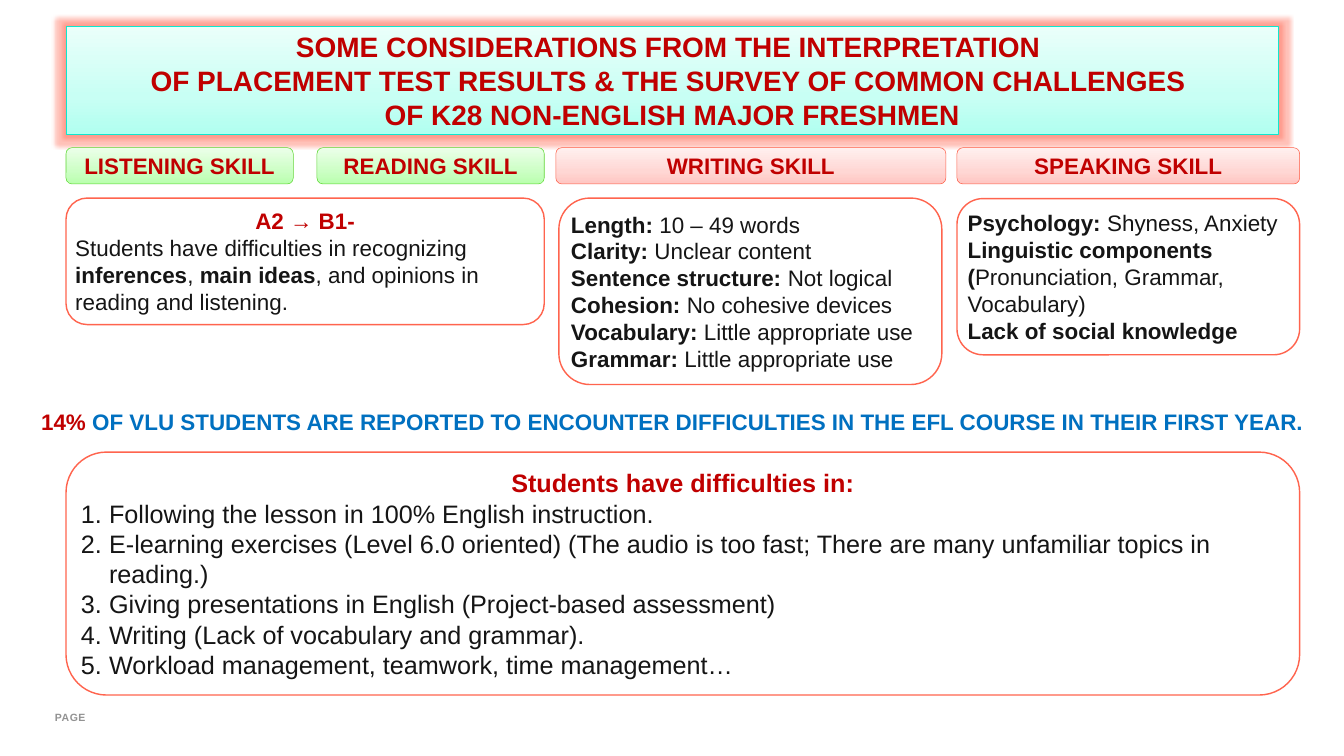
from copy import deepcopy

from lxml import etree
from pptx import Presentation
from pptx.dml.color import RGBColor
from pptx.enum.shapes import MSO_SHAPE
from pptx.enum.text import MSO_ANCHOR, PP_ALIGN
from pptx.oxml.ns import qn
from pptx.util import Pt

RECT, ROUNDED = MSO_SHAPE.RECTANGLE, MSO_SHAPE.ROUNDED_RECTANGLE
LEFT, CENTER = PP_ALIGN.LEFT, PP_ALIGN.CENTER
TOP, MIDDLE = MSO_ANCHOR.TOP, MSO_ANCHOR.MIDDLE
PX = 9144  # 100 px to the inch

THEME = {
    "font": "Arial",
    "heading": "C00000", "body": "151515", "notice": "0070C0", "footer": "929292",
    "card": "FFFFFF", "card_line": "FF644E", "glow": "FF644E",
    "teal": (("B1FFF0", "C8FFF4", "EAFFFA"), "10E7CE"),
    "green": (("B8FFAC", "CCFFC5", "ECFFE9"), "5DD731"),
    "red": (("FFC6C2", "FFD7D4", "FFF0EF"), "FE5F48"),
    "title_pt": 40, "list_pt": 36, "text_pt": 32, "footer_pt": 15,
}

prs = Presentation()
prs.slide_width, prs.slide_height = 2667 * PX, 1500 * PX
slide = prs.slides.add_slide(prs.slide_layouts[6])


def add_panel(bounds, preset, palette=None):
    """Add a gradient panel when a palette is given, otherwise a white card."""
    panel = slide.shapes.add_shape(preset, *(n * PX for n in bounds))
    panel.shadow.inherit = False
    if palette:
        shades, line_color = THEME[palette]
        panel.fill.gradient()
        panel.fill.gradient_angle = 90
        stop_list = panel._element.spPr.find(".//" + qn("a:gsLst"))
        stop_list.append(deepcopy(stop_list[-1]))
        for stop, position, shade in zip(panel.fill.gradient_stops, (0, 0.35, 1), shades):
            stop.position = position
            stop.color.rgb = RGBColor.from_string(shade)
    else:
        line_color = THEME["card_line"]
        panel.fill.solid()
        panel.fill.fore_color.rgb = RGBColor.from_string(THEME["card"])
    panel.line.color.rgb = RGBColor.from_string(line_color)
    panel.line.width = Pt(0.75 if palette else 2)
    return panel


def write(shape, paragraphs, size, anchor=MIDDLE):
    """Fill a shape with (alignment, numbered, color, text) paragraphs; ** toggles bold."""
    frame = shape.text_frame
    frame.word_wrap = True
    frame.vertical_anchor = anchor
    frame.margin_left = frame.margin_right = frame.margin_top = frame.margin_bottom = 6 * PX
    for index, (alignment, numbered, color, text) in enumerate(paragraphs):
        paragraph = frame.add_paragraph() if index else frame.paragraphs[0]
        paragraph.alignment = alignment
        if numbered:
            properties = paragraph._p.get_or_add_pPr()
            properties.set("marL", str(56 * PX))
            properties.set("indent", str(-56 * PX))
            etree.SubElement(properties, qn("a:buAutoNum"), type="arabicPeriod")
        for part, words in enumerate(text.split("**")):
            if words:
                run = paragraph.add_run()
                run.text = words
                run.font.name = THEME["font"]
                run.font.size = Pt(THEME[size])
                run.font.bold = part % 2 == 1
                run.font.color.rgb = RGBColor.from_string(THEME[color])


footer = slide.shapes.add_textbox(103 * PX, 1405 * PX, 414 * PX, 42 * PX)
write(footer, [(LEFT, False, "footer", "**PAGE**")], "footer_pt", TOP)
footer.text_frame.paragraphs[0].runs[0].font._element.set("spc", "80")

title = add_panel((131, 53, 2405, 213), RECT, "teal")
effects = title._element.spPr.find(qn("a:effectLst"))
glow = etree.SubElement(effects, qn("a:glow"), rad=str(15 * PX))
glow_color = etree.SubElement(glow, qn("a:srgbClr"), val=THEME["glow"])
etree.SubElement(glow_color, qn("a:alpha"), val="40000")
title_lines = (
    "SOME CONSIDERATIONS FROM THE INTERPRETATION ",
    "OF PLACEMENT TEST RESULTS & THE SURVEY OF COMMON CHALLENGES ",
    "OF K28 NON-ENGLISH MAJOR FRESHMEN",
)
write(title, [(CENTER, False, "heading", f"**{line}**") for line in title_lines], "title_pt")

for skill, left, width, palette in (
    ("LISTENING", 131, 451, "green"),
    ("READING", 629, 451, "green"),
    ("WRITING", 1103, 774, "red"),
    ("SPEAKING", 1899, 680, "red"),
):
    skill_tab = add_panel((left, 293, width, 72), ROUNDED, palette)
    write(skill_tab, [(CENTER, False, "heading", f"**{skill} SKILL**")], "text_pt")

# Each card: bounds, type size, centred heading, numbered, body paragraphs
cards = (
    ((131, 393, 949, 251), "text_pt", "A2 → B1-", False, (
        "Students have difficulties in recognizing **inferences**, **main ideas**, "
        "and opinions in reading and listening.",
    )),
    ((1109, 393, 760, 370), "text_pt", None, False, (
        "**Length:** 10 – 49 words",
        "**Clarity:** Unclear content",
        "**Sentence structure: **Not logical",
        "**Cohesion: **No cohesive devices",
        "**Vocabulary:** Little appropriate use",
        "**Grammar: **Little appropriate use",
    )),
    ((1899, 394, 680, 310), "text_pt", None, False, (
        "**Psychology: **Shyness, Anxiety",
        "**Linguistic components (**Pronunciation, Grammar, Vocabulary)",
        "**Lack of social knowledge**",
    )),
    ((131, 897, 2448, 482), "list_pt", "Students have difficulties in:", True, (
        "Following the lesson in 100% English instruction.",
        "E-learning exercises (Level 6.0 oriented) (The audio is too fast; "
        "There are many unfamiliar topics in reading.)",
        "Giving presentations in English (Project-based assessment)",
        "Writing (Lack of vocabulary and grammar).",
        "Workload management, teamwork, time management…",
    )),
)
for bounds, size, heading, numbered, body in cards:
    paragraphs = [(CENTER, False, "heading", f"**{heading}**")] if heading else []
    paragraphs += [(LEFT, numbered, "body", text) for text in body]
    write(add_panel(bounds, ROUNDED), paragraphs, size)

notice = slide.shapes.add_textbox(28 * PX, 804 * PX, 2614 * PX, 65 * PX)
write(notice, [(
    CENTER, False, "notice",
    "**14%**** OF VLU STUDENTS ARE REPORTED TO ENCOUNTER DIFFICULTIES "
    "IN THE EFL COURSE IN THEIR FIRST YEAR.**",
)], "text_pt")
share = notice.text_frame.paragraphs[0].runs[0]
share.font.color.rgb = RGBColor.from_string(THEME["heading"])

prs.save("out.pptx")
